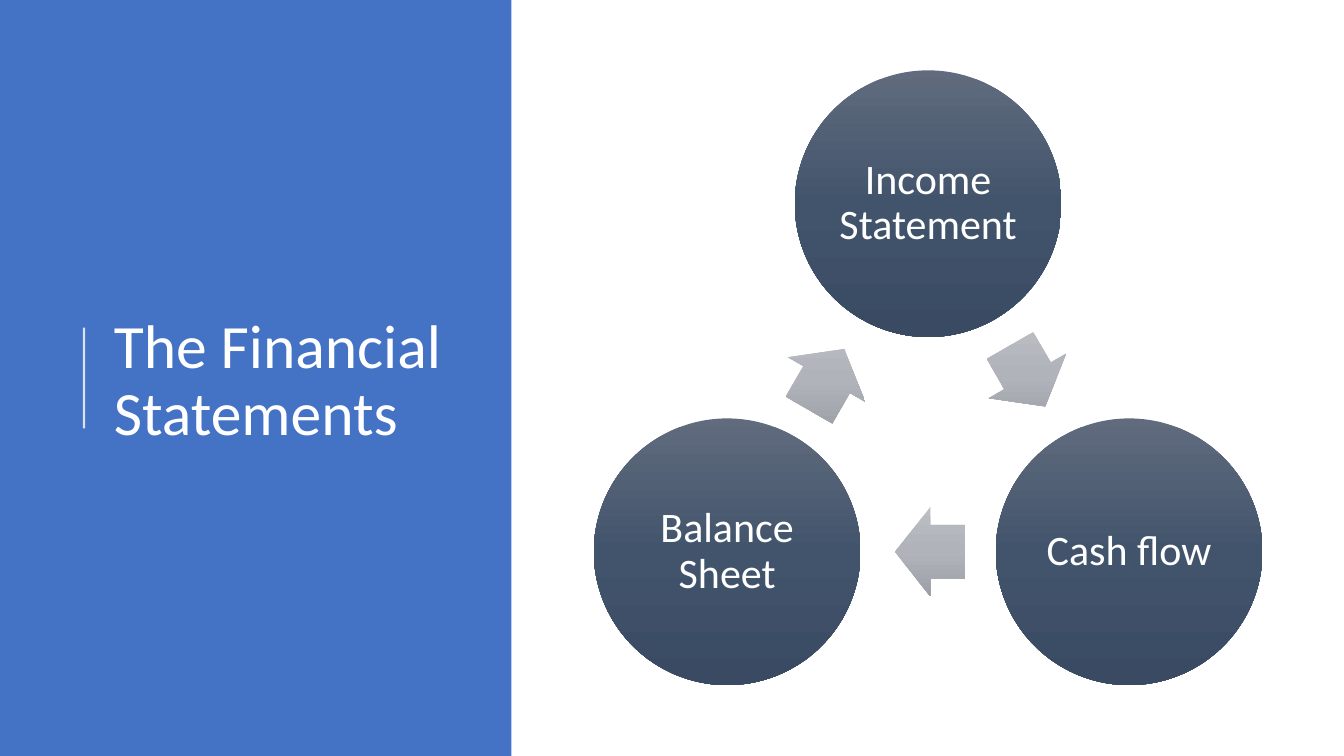
from math import cos, radians, sin

from pptx import Presentation
from pptx.dml.color import RGBColor
from pptx.enum.shapes import MSO_CONNECTOR, MSO_SHAPE
from pptx.enum.text import MSO_ANCHOR, PP_ALIGN
from pptx.oxml import parse_xml
from pptx.oxml.ns import nsdecls, qn
from pptx.util import Pt

TITLE = "The Financial Statements"
STATEMENTS = ["Income Statement", "Cash flow", "Balance Sheet"]

PX = 9525
FONT = "Calibri"
WHITE = RGBColor(0xFF, 0xFF, 0xFF)
BLUE = RGBColor(0x44, 0x72, 0xC4)
CIRCLE_COLORS = [RGBColor(0x60, 0x6B, 0x7D), RGBColor(0x42, 0x54, 0x6C), RGBColor(0x39, 0x4A, 0x62)]
ARROW_COLORS = [RGBColor(0xBA, 0xBD, 0xC2), RGBColor(0xB0, 0xB3, 0xBA), RGBColor(0x9C, 0x9F, 0xA6)]

RECTANGLE = MSO_SHAPE.RECTANGLE
OVAL = MSO_SHAPE.OVAL
RIGHT_ARROW = MSO_SHAPE.RIGHT_ARROW
STRAIGHT = MSO_CONNECTOR.STRAIGHT
MIDDLE = MSO_ANCHOR.MIDDLE
LEFT = PP_ALIGN.LEFT
CENTER = PP_ALIGN.CENTER

CYCLE_X, CYCLE_Y, CYCLE_RADIUS = 884, 415, 221
DIAMETER = 254
ARROW_WIDTH, ARROW_HEIGHT = 67, 85
ARROW_SETBACK = 2


def emu(*lengths):
    return [round(length * PX) for length in lengths]


def add_plain_shape(slide, kind, left, top, width, height):
    shape = slide.shapes.add_shape(kind, *emu(left, top, width, height))
    shape.shadow.inherit = False
    shape.line.fill.background()
    return shape


def add_centered_shape(slide, kind, x, y, width, height):
    return add_plain_shape(slide, kind, x - width / 2, y - height / 2, width, height)


def fill_downward(shape, colors):
    stops = "".join(
        f'<a:gs pos="{index * 50000}"><a:srgbClr val="{color}"/></a:gs>'
        for index, color in enumerate(colors)
    )
    gradient = parse_xml(
        f'<a:gradFill {nsdecls("a")} rotWithShape="0"><a:gsLst>{stops}</a:gsLst>'
        '<a:lin ang="5400000" scaled="0"/></a:gradFill>'
    )
    shape.fill.background()
    properties = shape._element.spPr
    properties.replace(properties.find(qn("a:noFill")), gradient)


def write(shape, text, size, alignment):
    frame = shape.text_frame
    frame.word_wrap = True
    frame.vertical_anchor = MIDDLE
    paragraph = frame.paragraphs[0]
    paragraph.text = text
    paragraph.alignment = alignment
    paragraph.line_spacing = 0.9
    paragraph.font.name = FONT
    paragraph.font.size = Pt(size)
    paragraph.font.color.rgb = WHITE


def add_title_panel(slide):
    panel = add_plain_shape(slide, RECTANGLE, 0, 0, 487, 720)
    panel.fill.solid()
    panel.fill.fore_color.rgb = BLUE

    rule = slide.shapes.add_connector(STRAIGHT, *emu(80, 408, 80, 312))
    rule.line.color.rgb = WHITE
    rule.line.width = Pt(1.5)
    properties = rule._element.spPr
    color = properties.find(".//" + qn("a:srgbClr"))
    color.append(parse_xml(f'<a:alpha {nsdecls("a")} val="80000"/>'))
    properties.append(parse_xml(f'<a:effectLst {nsdecls("a")}/>'))

    title = slide.shapes.add_textbox(*emu(99, 75, 354, 578))
    write(title, TITLE, 44, LEFT)


def add_cycle(slide):
    step = 360 / len(STATEMENTS)
    for index, statement in enumerate(STATEMENTS):
        angle = radians(index * step - 90)
        circle = add_centered_shape(
            slide, OVAL,
            CYCLE_X + CYCLE_RADIUS * cos(angle),
            CYCLE_Y + CYCLE_RADIUS * sin(angle),
            DIAMETER, DIAMETER,
        )
        fill_downward(circle, CIRCLE_COLORS)
        write(circle, statement, 30, CENTER)
        frame = circle.text_frame
        frame.margin_left = frame.margin_right = 4 * PX
        frame.margin_top = frame.margin_bottom = 4 * PX

        middle = angle + radians(step / 2)
        heading = middle + radians(90)
        distance = CYCLE_RADIUS * cos(radians(step / 2))
        arrow = add_centered_shape(
            slide, RIGHT_ARROW,
            CYCLE_X + distance * cos(middle) - ARROW_SETBACK * cos(heading),
            CYCLE_Y + distance * sin(middle) - ARROW_SETBACK * sin(heading),
            ARROW_WIDTH, ARROW_HEIGHT,
        )
        arrow.rotation = (index + 0.5) * step
        arrow.adjustments[0] = 0.6
        arrow.adjustments[1] = 0.5
        fill_downward(arrow, ARROW_COLORS)


def main():
    presentation = Presentation()
    presentation.slide_width, presentation.slide_height = emu(1280, 720)
    slide = presentation.slides.add_slide(presentation.slide_layouts[6])
    add_title_panel(slide)
    add_cycle(slide)
    presentation.save("out.pptx")


if __name__ == "__main__":
    main()
